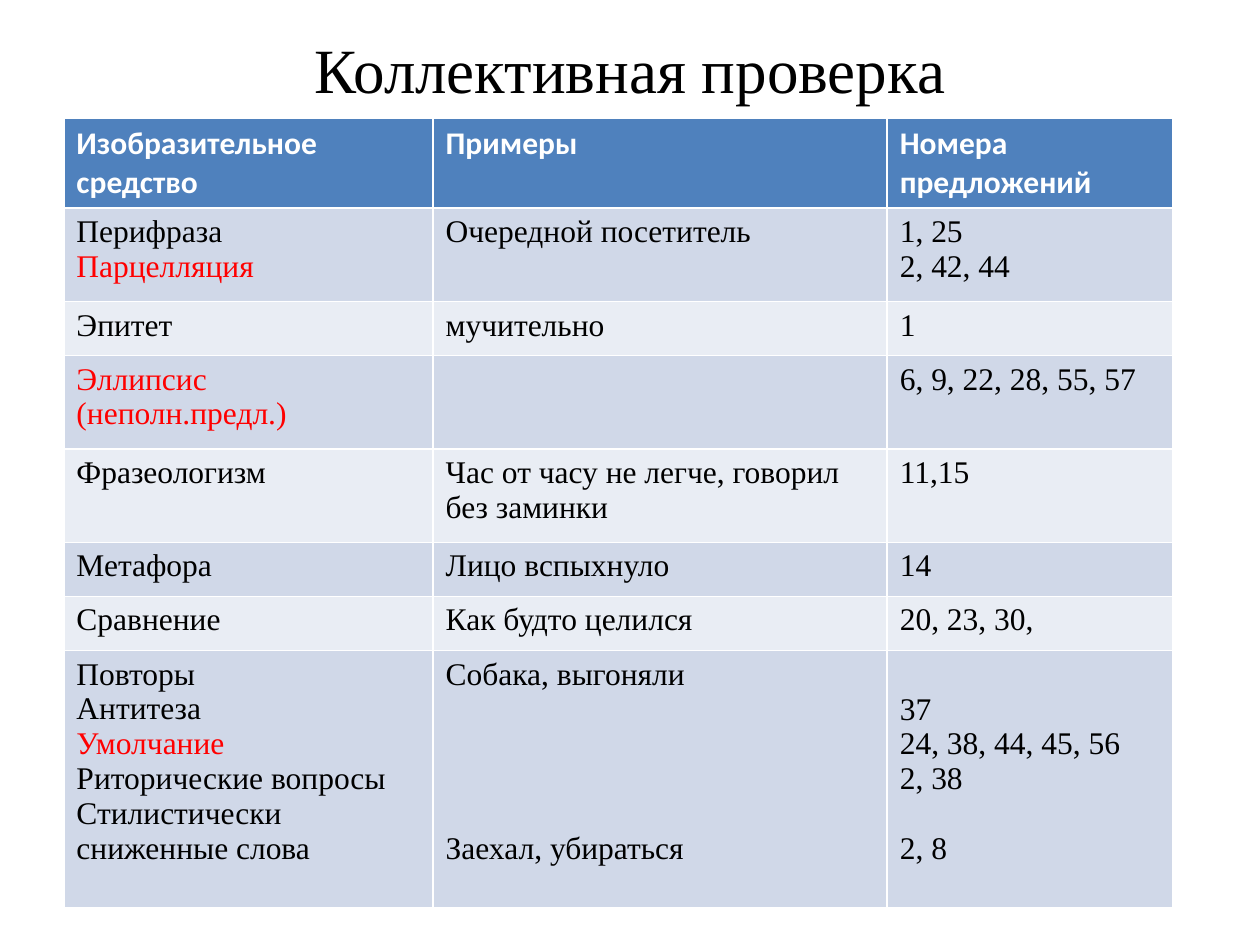
from pptx import Presentation
from pptx.dml.color import RGBColor
from pptx.enum.text import MSO_ANCHOR, MSO_AUTO_SIZE, PP_ALIGN
from pptx.util import Pt

TITLE = "Коллективная проверка"
HEADER = ["Изобразительное средство", "Примеры", "Номера предложений"]
# Each cell lists its lines; None leaves one line of space.
ROWS = [
    (["Перифраза", "Парцелляция"], ["Очередной посетитель"], ["1, 25", "2, 42, 44"]),
    (["Эпитет"], ["мучительно"], ["1"]),
    (["Эллипсис (неполн.предл.)"], [], ["6, 9, 22, 28, 55, 57"]),
    (["Фразеологизм"], ["Час от часу не легче, говорил без заминки"], ["11,15"]),
    (["Метафора"], ["Лицо вспыхнуло"], ["14"]),
    (["Сравнение"], ["Как будто целился"], ["20, 23, 30,"]),
    (["Повторы", "Антитеза", "Умолчание", "Риторические вопросы",
      "Стилистически сниженные слова"],
     ["Собака, выгоняли", None, None, None, None, "Заехал, убираться"],
     [None, "37", "24, 38, 44, 45, 56", "2, 38", None, "2, 8"]),
]
HIGHLIGHTED = {"Парцелляция", "Эллипсис (неполн.предл.)", "Умолчание"}

COLUMN_WIDTHS = [211, 259.5, 163]
ROW_HEIGHTS = [50.4, 53.4, 30.9, 53.4, 53.4, 30.9, 30.9, 147]
BAND_FILLS = ["D0D8E8", "E9EDF4"]
LINE_HEIGHT = 20
CELL_MARGIN = 3.6
SERIF = "Times New Roman"


def color(value):
    return RGBColor.from_string(value)


def set_font(paragraph, name, size, value, bold=False):
    font = paragraph.font
    font.name, font.size, font.bold = name, Pt(size), bold
    font.color.rgb = color(value)


def fill_cell(cell, value):
    cell.fill.solid()
    cell.fill.fore_color.rgb = color(value)


def write_lines(cell, lines):
    """Write one paragraph per line, turning None entries into space above."""
    gap, first = 0, True
    for line in lines:
        if line is None:
            gap += LINE_HEIGHT
            continue
        if first:
            paragraph = cell.text_frame.paragraphs[0]
            cell.margin_top = Pt(CELL_MARGIN + gap)
        else:
            paragraph = cell.text_frame.add_paragraph()
            paragraph.space_before = Pt(gap)
        paragraph.text = line
        set_font(paragraph, SERIF, 18, "FF0000" if line in HIGHLIGHTED else "000000")
        gap, first = 0, False
    if first:
        set_font(cell.text_frame.paragraphs[0], SERIF, 18, "000000")


presentation = Presentation()
presentation.slide_width, presentation.slide_height = Pt(720), Pt(540)
slide = presentation.slides.add_slide(presentation.slide_layouts[5])

title = slide.shapes.title
title.left, title.top, title.width, title.height = Pt(36), Pt(21.6), Pt(648), Pt(34.6)
title.text_frame.text = TITLE
title.text_frame.auto_size = MSO_AUTO_SIZE.NONE
title.text_frame.vertical_anchor = MSO_ANCHOR.MIDDLE
title_paragraph = title.text_frame.paragraphs[0]
title_paragraph.alignment = PP_ALIGN.CENTER
set_font(title_paragraph, SERIF, 36, "000000")

table = slide.shapes.add_table(
    len(ROW_HEIGHTS), len(COLUMN_WIDTHS), Pt(36.5), Pt(67.8),
    Pt(sum(COLUMN_WIDTHS)), Pt(sum(ROW_HEIGHTS))).table
for column, width in zip(table.columns, COLUMN_WIDTHS):
    column.width = Pt(width)
for row, height in zip(table.rows, ROW_HEIGHTS):
    row.height = Pt(height)

for index, heading in enumerate(HEADER):
    cell = table.cell(0, index)
    fill_cell(cell, "4F81BD")
    cell.text = heading
    set_font(cell.text_frame.paragraphs[0], "Calibri", 18, "FFFFFF", bold=True)

for row_index, row in enumerate(ROWS):
    for column_index, lines in enumerate(row):
        cell = table.cell(row_index + 1, column_index)
        fill_cell(cell, BAND_FILLS[row_index % 2])
        write_lines(cell, lines)

presentation.save("out.pptx")
